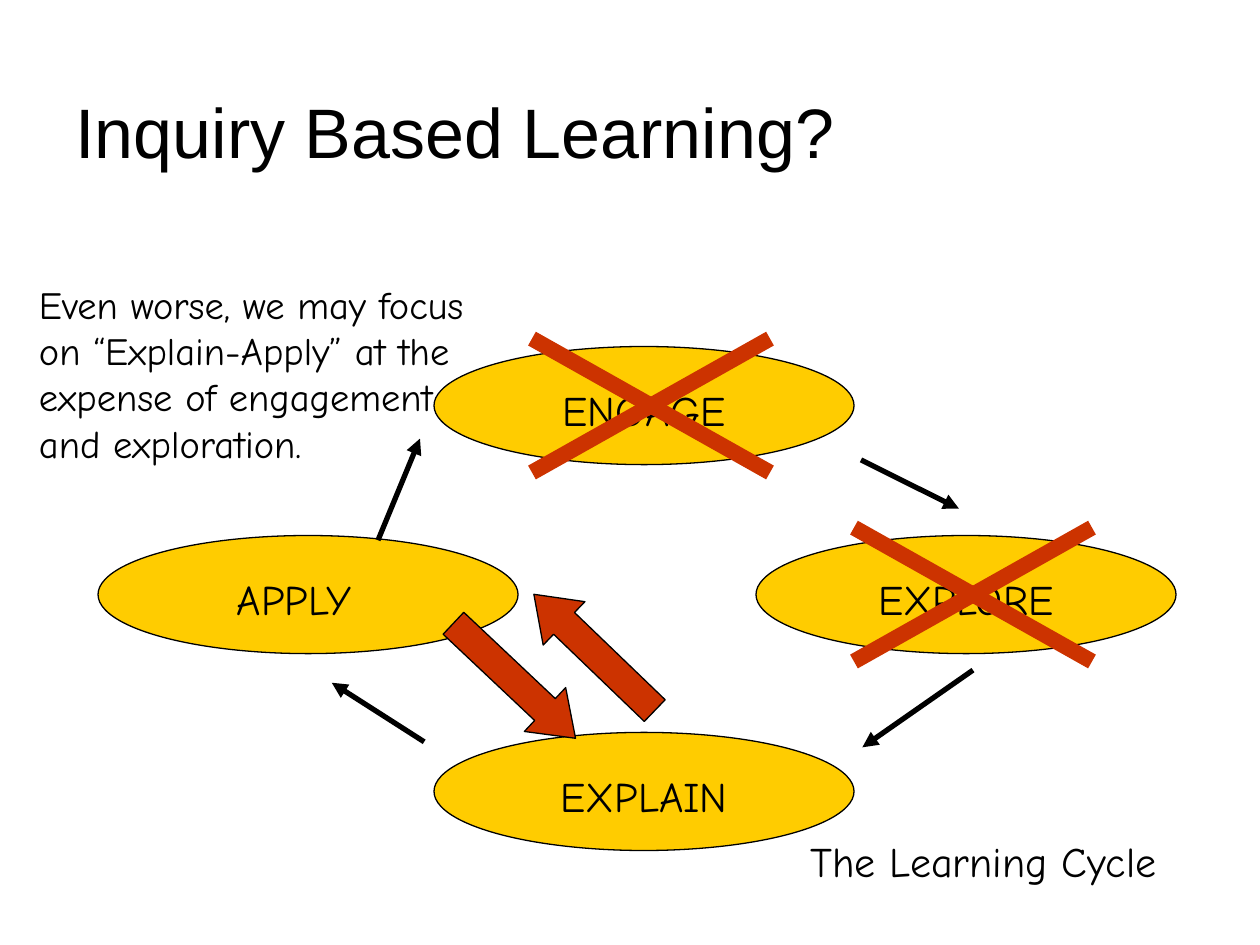
from dataclasses import dataclass

from lxml import etree
from pptx import Presentation
from pptx.dml.color import RGBColor
from pptx.enum.shapes import MSO_CONNECTOR, MSO_SHAPE
from pptx.enum.text import MSO_ANCHOR, MSO_AUTO_SIZE, PP_ALIGN
from pptx.oxml.ns import qn
from pptx.util import Inches, Pt

OVAL, BLOCK_ARROW = MSO_SHAPE.OVAL, MSO_SHAPE.DOWN_ARROW
STRAIGHT = MSO_CONNECTOR.STRAIGHT
LEFT, CENTER = PP_ALIGN.LEFT, PP_ALIGN.CENTER
TOP, BOTTOM = MSO_ANCHOR.TOP, MSO_ANCHOR.BOTTOM
NO_AUTOFIT = MSO_AUTO_SIZE.NONE

WIDTH, HEIGHT = Inches(10), Inches(7.5)
COLUMNS, ROWS = 90, 120


@dataclass(frozen=True)
class Theme:
    ink: RGBColor = RGBColor(0, 0, 0)
    stage: RGBColor = RGBColor(0xFF, 0xCC, 0x00)
    accent: RGBColor = RGBColor(0xCC, 0x33, 0x00)
    title_font: str = "Arial"
    body_font: str = "Comic Neue"
    title_size: int = 40
    label_size: int = 24
    comment_size: int = 22
    outline: float = 0.75
    arrow: float = 3
    cross: float = 9


class SlideBuilder:
    """Places styled elements on a grid of COLUMNS by ROWS."""

    def __init__(self, slide, theme):
        self.slide, self.theme = slide, theme

    def grid(self, *values):
        steps = (WIDTH / COLUMNS, HEIGHT / ROWS)
        return [round(v * steps[i % 2]) for i, v in enumerate(values)]

    def fill_text(self, frame, text, size, font_name, align=LEFT, anchor=TOP):
        frame.text = text
        frame_format = {"word_wrap": True, "auto_size": NO_AUTOFIT,
                        "vertical_anchor": anchor}
        for name, value in frame_format.items():
            setattr(frame, name, value)
        paragraph = frame.paragraphs[0]
        paragraph.alignment = align
        font = paragraph.runs[0].font
        for name, value in {"name": font_name, "size": Pt(size)}.items():
            setattr(font, name, value)
        font.color.rgb = self.theme.ink

    def title(self, text, box):
        heading = self.slide.shapes.title
        for name, value in zip(("left", "top", "width", "height"), self.grid(*box)):
            setattr(heading, name, value)
        self.fill_text(heading.text_frame, text, self.theme.title_size,
                       self.theme.title_font, anchor=BOTTOM)

    def text(self, text, box, size, align=LEFT):
        area = self.slide.shapes.add_textbox(*self.grid(*box))
        self.fill_text(area.text_frame, text, size, self.theme.body_font, align)

    def shape(self, kind, box, color):
        shape = self.slide.shapes.add_shape(kind, *self.grid(*box))
        shape.shadow.inherit = False
        shape.fill.solid()
        shape.fill.fore_color.rgb = color
        shape.line.color.rgb = self.theme.ink
        shape.line.width = Pt(self.theme.outline)
        return shape

    def block_arrow(self, box, rotation):
        arrow = self.shape(BLOCK_ARROW, box, self.theme.accent)
        arrow.rotation = rotation
        arrow.adjustments[0], arrow.adjustments[1] = 0.5, 0.696

    def line(self, ends, color, width):
        line = self.slide.shapes.add_connector(STRAIGHT, *self.grid(*ends))
        line.line.color.rgb = color
        line.line.width = Pt(width)
        etree.SubElement(line._element.spPr, qn("a:effectLst"))
        return line

    def arrow(self, ends):
        arrow = self.line(ends, self.theme.ink, self.theme.arrow)
        outline = arrow._element.spPr.find(qn("a:ln"))
        etree.SubElement(outline, qn("a:tailEnd"), type="triangle")

    def cross(self, column, row, span):
        right, bottom = column + span, row + span
        for ends in ((column, row, right, bottom), (right, row, column, bottom)):
            self.line(ends, self.theme.accent, self.theme.cross)


def main():
    deck = Presentation()
    deck.slide_width, deck.slide_height = WIDTH, HEIGHT
    theme = Theme()
    builder = SlideBuilder(deck.slides.add_slide(deck.slide_layouts[5]), theme)

    builder.title("Inquiry Based Learning?", (4.5, 8, 69.75, 14.7))

    # Stages of the cycle: name, column, row, label indent
    stages = (
        ("ENGAGE", 31, 44, 4),
        ("APPLY", 7, 68, 3),
        ("EXPLAIN", 31, 93, 4),
        ("EXPLORE", 54, 68, 4),
    )
    for name, column, row, indent in stages:
        builder.shape(OVAL, (column, row, 30, 15), theme.stage)
        builder.text(name, (column + indent, row + 4, 22, 8), theme.label_size, CENTER)

    # Arrows from each stage to the next
    cycle_steps = (
        (61.5, 58.4, 68.5, 64.6),
        (69.5, 85.1, 61.6, 94.9),
        (30.3, 94.2, 23.7, 86.7),
        (27, 68.6, 30, 55.7),
    )
    for ends in cycle_steps:
        builder.arrow(ends)

    # Short loop between Explain and Apply
    builder.block_arrow((40.3, 72.2, 4.3, 21.3), 133.9)
    builder.block_arrow((34.6, 75.8, 4.3, 21.3), 313.3)

    # Neglected stages are crossed out
    for name, column, row, _ in stages:
        if name in ("ENGAGE", "EXPLORE"):
            builder.cross(column + 7, row - 1, 17)

    # Caption and comment
    builder.text("The Learning Cycle", (57, 105.3, 29.8, 8), theme.label_size)
    builder.text("Even worse, we may focus on “Explain-Apply” at the expense of "
                 "engagement and exploration.",
                 (1.9, 34.9, 32.8, 30.9), theme.comment_size)

    deck.save("out.pptx")


if __name__ == "__main__":
    main()
